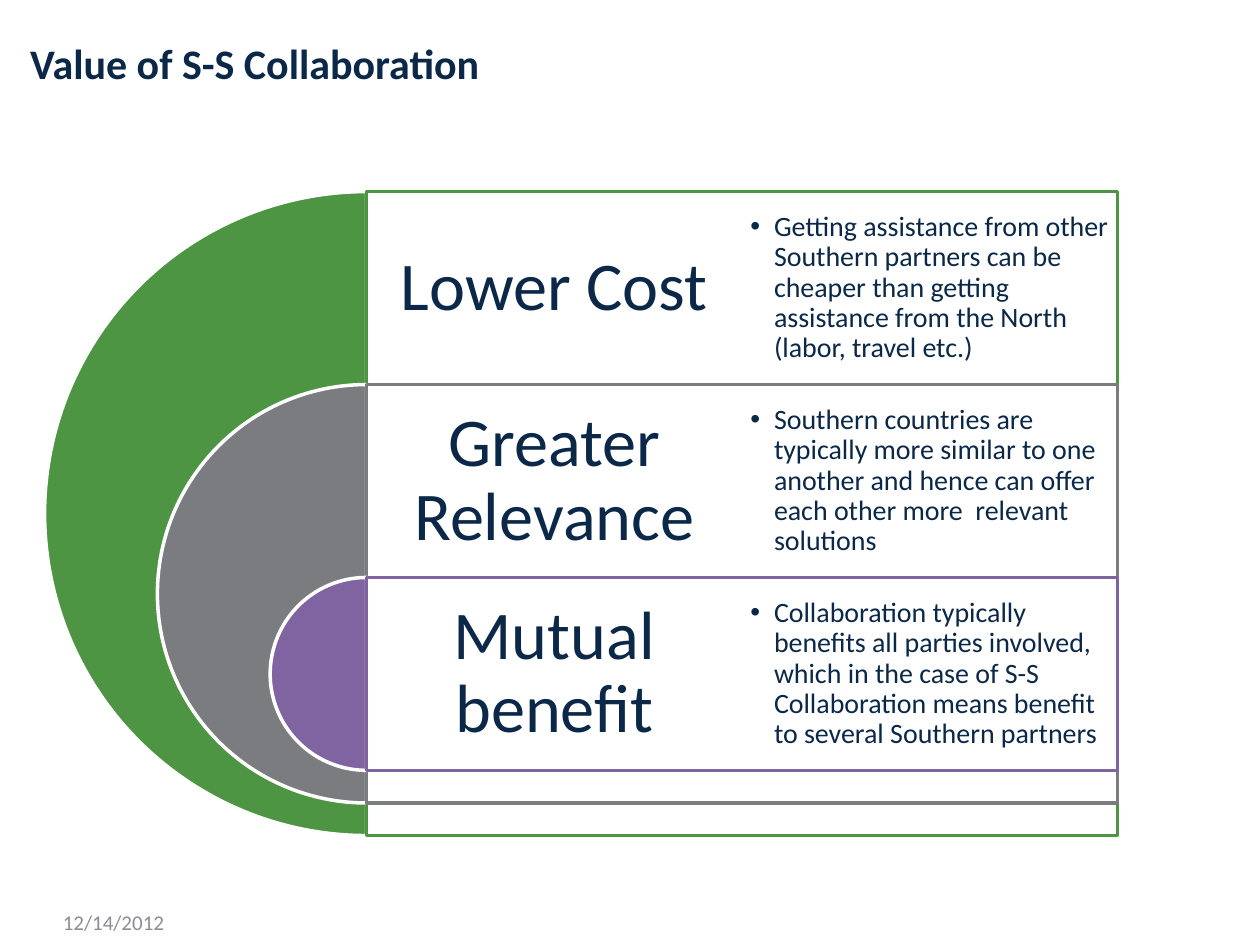
"""Build the slide on the value of S-S collaboration as nested half discs with framed text."""
from dataclasses import dataclass

from lxml.etree import SubElement
from pptx import Presentation
from pptx.dml.color import RGBColor
from pptx.enum.shapes import MSO_SHAPE as Preset
from pptx.enum.text import MSO_ANCHOR as Anchor, PP_ALIGN as Align
from pptx.oxml.ns import qn
from pptx.util import Pt

INK, WHITE, MUTED = "0B2848", "FFFFFF", "8A8D95"
CENTRE_X, TOP, BAND = 209.5, 109.5, 110.25
DISC, SHRINK = 368, 128.9
FRAME_WIDTH, COLUMN = 429, 214.5


@dataclass
class Benefit:
    heading: str
    detail: str
    colour: str


BENEFITS = [
    Benefit("Lower Cost",
            "Getting assistance from other Southern partners can be cheaper than "
            "getting assistance from the North (labor, travel etc.)", "4D9443"),
    Benefit("Greater Relevance",
            "Southern countries are typically more similar to one another and hence "
            "can offer each other more  relevant solutions", "7B7C7F"),
    Benefit("Mutual benefit",
            "Collaboration typically benefits all parties involved, which in the case of "
            "S-S Collaboration means benefit to several Southern partners", "8064A2"),
]


def rgb(value: str) -> RGBColor:
    return RGBColor.from_string(value)


def apply(target, formats: dict) -> None:
    for name, value in formats.items():
        setattr(target, name, value)


def hang(paragraph, indent: float, bullet: str = "") -> None:
    properties = paragraph._p.get_or_add_pPr()
    properties.set("marL", str(Pt(indent)))
    properties.set("indent", str(-Pt(indent)))
    if bullet:
        SubElement(properties, qn("a:buFont")).set("typeface", "Arial")
        SubElement(properties, qn("a:buChar")).set("char", bullet)


def write(shape, text: str, size: float, colour: str = INK, bold: bool = False,
          anchor=Anchor.MIDDLE, inset: float = None, indent: float = 0,
          bullet: str = "", **layout) -> None:
    frame = shape.text_frame
    apply(frame, {"text": text, "word_wrap": True, "vertical_anchor": anchor})
    if inset is not None:
        sides = ("left", "right", "top", "bottom")
        apply(frame, {f"margin_{side}": Pt(inset) for side in sides})
    paragraph = frame.paragraphs[0]
    apply(paragraph, layout)
    if indent:
        hang(paragraph, indent, bullet)
    font = paragraph.runs[0].font
    apply(font, {"name": "Calibri", "size": Pt(size), "bold": bold})
    font.color.rgb = rgb(colour)


def add_text(slide, left: float, top: float, width: float, height: float,
             text: str, size: float, **formats) -> None:
    box = slide.shapes.add_textbox(Pt(left), Pt(top), Pt(width), Pt(height))
    write(box, text, size, **formats)


def add_preset(slide, preset, left: float, top: float, width: float, height: float,
               fill: str, line: str):
    shape = slide.shapes.add_shape(preset, Pt(left), Pt(top), Pt(width), Pt(height))
    shape.shadow.inherit = False
    shape.fill.solid()
    shape.fill.fore_color.rgb = rgb(fill)
    shape.line.color.rgb = rgb(line)
    shape.line.width = Pt(2)
    return shape


def add_benefit(slide, index: int, benefit: Benefit) -> None:
    top, size = TOP + index * BAND, DISC - index * SHRINK
    half_disc = add_preset(slide, Preset.PIE, CENTRE_X - size / 2, top, size, size,
                           benefit.colour, WHITE)
    half_disc.adjustments[0], half_disc.adjustments[1] = 54, 162
    panel = add_preset(slide, Preset.RECTANGLE, CENTRE_X, top, FRAME_WIDTH, size,
                       WHITE, benefit.colour)
    tint = panel.fill._xPr.find(".//" + qn("a:srgbClr"))
    SubElement(tint, qn("a:alpha")).set("val", "90000")
    add_text(slide, CENTRE_X, top, COLUMN, BAND, benefit.heading, 39, inset=11.7,
             alignment=Align.CENTER, line_spacing=0.9)
    add_text(slide, CENTRE_X + COLUMN, top, COLUMN, BAND, benefit.detail, 16, inset=4.8,
             indent=13.5, bullet="•", alignment=Align.LEFT, line_spacing=0.9)


def main() -> None:
    deck = Presentation()
    apply(deck, {"slide_width": Pt(720), "slide_height": Pt(540)})
    slide = deck.slides.add_slide(deck.slide_layouts[5])
    title = slide.shapes.title
    apply(title, {"left": Pt(10), "top": Pt(18), "width": Pt(529), "height": Pt(51)})
    write(title, "Value of S-S Collaboration", 24, bold=True, anchor=Anchor.TOP,
          indent=27, alignment=Align.LEFT)
    for index, benefit in enumerate(BENEFITS):
        add_benefit(slide, index, benefit)
    add_text(slide, 28.8, 512.6, 168, 28.8, "12/14/2012", 12, colour=MUTED)
    deck.save("out.pptx")


if __name__ == "__main__":
    main()
